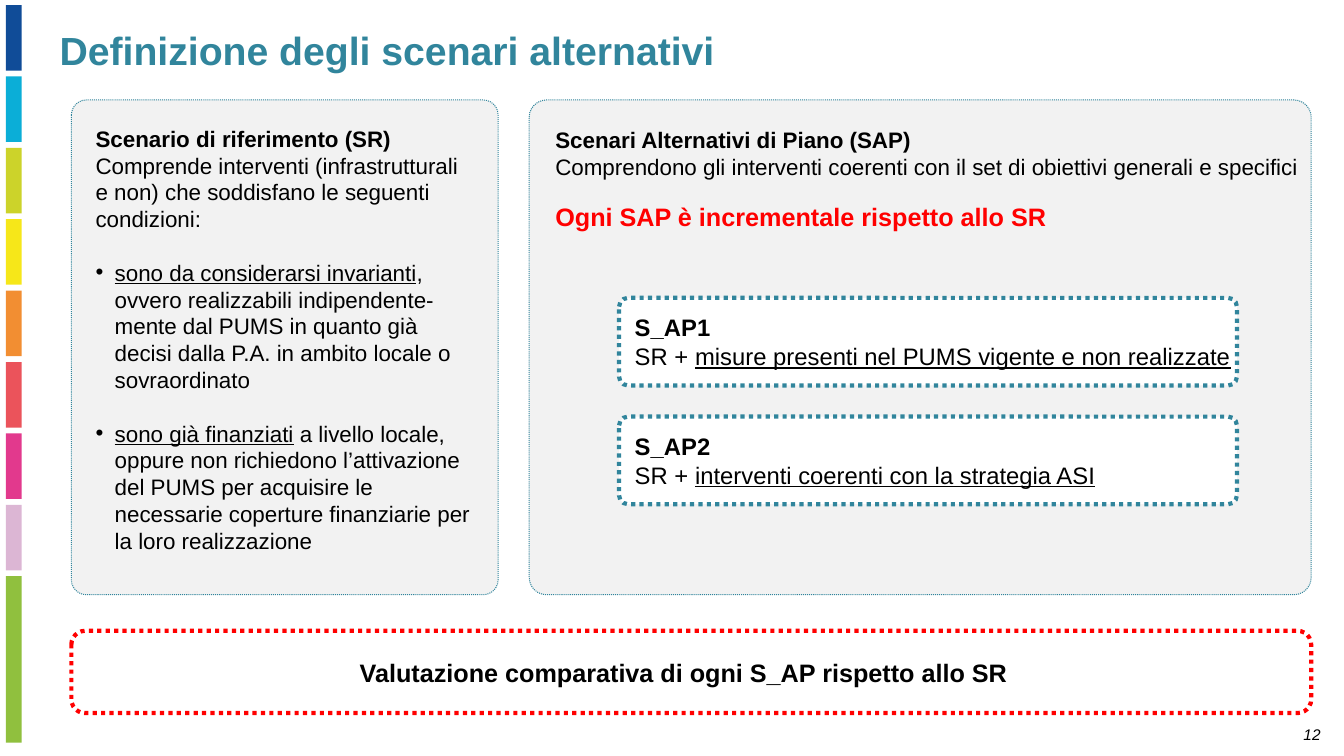
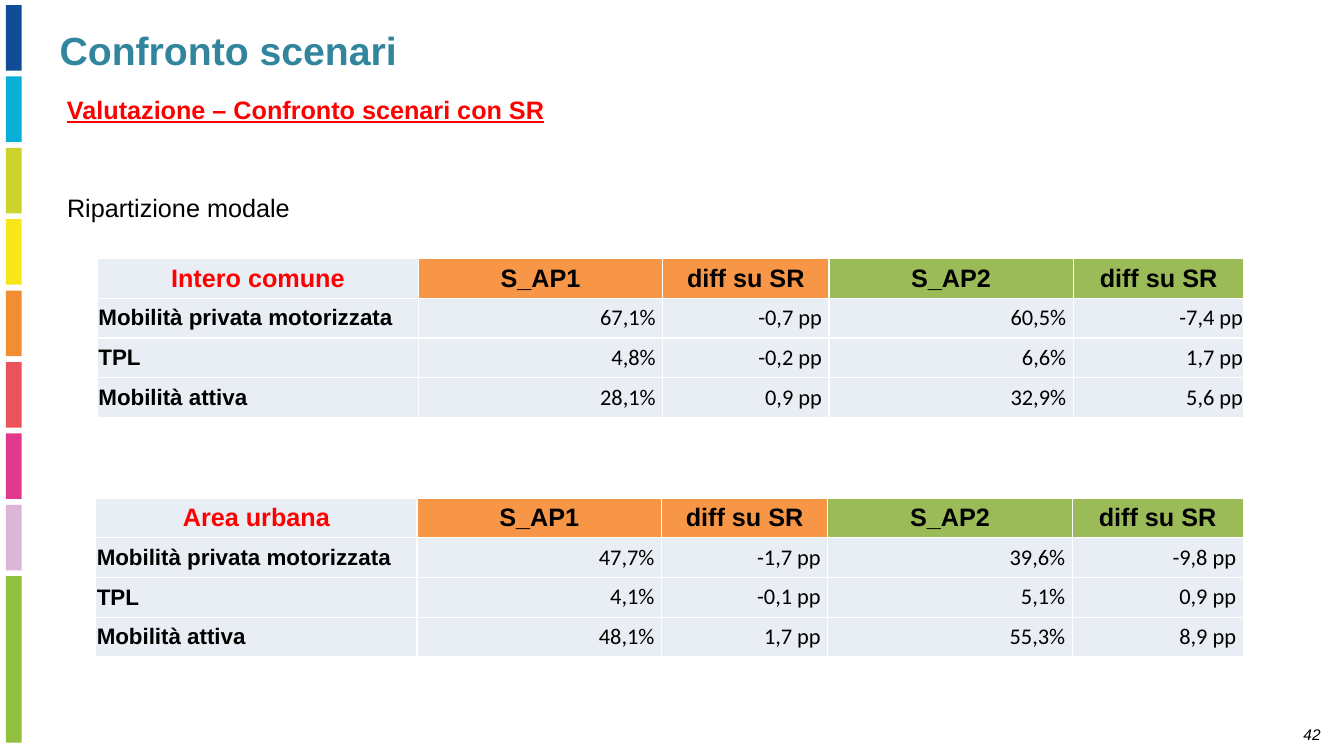
from dataclasses import dataclass

from pptx import Presentation
from pptx.dml.color import RGBColor
from pptx.enum.dml import MSO_LINE
from pptx.enum.shapes import MSO_SHAPE as SHAPE
from pptx.enum.text import MSO_ANCHOR as ANCHOR, MSO_AUTO_SIZE as FIT, PP_ALIGN as ALIGN
from pptx.oxml.xmlchemy import OxmlElement
from pptx.util import Inches, Pt

COLS, ROWS = 160, 90
CELL = Inches(13.3333) // COLS
TEAL, RED, BLACK, WHITE = "31859C", "FF0000", "000000", "FFFFFF"
PANEL, PALE, ORANGE, GREEN = "F2F2F2", "E9EDF4", "F79646", "9BBB59"
BANDS = ["104C98", "0BAED7", "CCD32A", "F6E719", "F28E32", "EB535B", "E2398D", "DCB6D4", "90C03E"]
TABLE_COLS = [0.28, 0.213, 0.145, 0.213, 0.149]


@dataclass
class Box:
    x: float
    y: float
    w: float
    h: float

    def inner(self, x, y, w, h):
        return Box(self.x + x * self.w, self.y + y * self.h, w * self.w, h * self.h)

    def emu(self):
        return [round(v * CELL) for v in (self.x, self.y, self.w, self.h)]


TITLE = Box(5.9, 2.5, 141.2, 6.9)
NUMBER = Box(144.2, 85.7, 14.2, 3.5)


def paint(target, color):
    if hasattr(target, "solid"):
        target.solid()
        target.fore_color.rgb = RGBColor.from_string(color)
    else:
        target.color.rgb = RGBColor.from_string(color)


def move(sp, box):
    sp.left, sp.top, sp.width, sp.height = box.emu()


def format_run(r, size, color=BLACK, style="", font="Arial"):
    f = r.font
    f.name, f.size = font, Pt(size)
    f.bold, f.italic, f.underline = "b" in style, "i" in style, "u" in style
    paint(f, color)


def set_bullet(p, char=None, indent=0):
    pPr = p._p.get_or_add_pPr()
    pPr.set("marL", str(Inches(indent)))
    pPr.set("indent", str(-Inches(indent)))
    bu = OxmlElement("a:buChar" if char else "a:buNone")
    if char:
        bu.set("char", char)
    pPr.append(bu)


def write(tf, paragraphs, size, color=BLACK, align=ALIGN.LEFT):
    tf.word_wrap = True
    for i, runs in enumerate(paragraphs):
        p = tf.add_paragraph() if i else tf.paragraphs[0]
        p.alignment = align
        for text, style in runs:
            r = p.add_run()
            r.text = text
            format_run(r, size, color, style)
    return tf.paragraphs


def add_text(slide, box, text, size, color=BLACK, style="", align=ALIGN.LEFT):
    sp = slide.shapes.add_textbox(*box.emu())
    write(sp.text_frame, [[(text, style)]], size, color, align)


def add_frame(slide, box, line, width, radius, fill=None, insets=(0.1, 0.05, 0.1, 0.05)):
    sp = slide.shapes.add_shape(SHAPE.ROUNDED_RECTANGLE, *box.emu())
    sp.shadow.inherit = False
    sp.adjustments[0] = radius
    if fill:
        paint(sp.fill, fill)
    else:
        sp.fill.background()
    paint(sp.line, line)
    sp.line.width, sp.line.dash_style = Pt(width), MSO_LINE.ROUND_DOT
    tf = sp.text_frame
    tf.margin_left, tf.margin_top, tf.margin_right, tf.margin_bottom = map(Inches, insets)
    tf.vertical_anchor = ANCHOR.MIDDLE
    return sp


def add_bands(slide, master):
    tree = master.shapes._spTree
    for i, color in enumerate(BANDS):
        height = 19.8 if i == len(BANDS) - 1 else 7.8
        sp = slide.shapes.add_shape(SHAPE.RECTANGLE, *Box(0.7, 0.6 + 8.5 * i, 1.9, height).emu())
        sp.shadow.inherit = False
        paint(sp.fill, color)
        sp.line.fill.background()
        sp._element.nvSpPr.cNvPr.set("id", str(100 + i))
        tree.insert(2 + i, sp._element)


def start_slide(prs, layout, title, number):
    slide = prs.slides.add_slide(prs.slide_layouts[layout])
    sp = slide.shapes.title
    move(sp, TITLE)
    tf = sp.text_frame
    tf.auto_size, tf.vertical_anchor = FIT.NONE, ANCHOR.MIDDLE
    write(tf, [[(title, "b")]], 28, TEAL)
    add_text(slide, NUMBER, number, 11, style="i", align=ALIGN.RIGHT)
    return slide


def reference_panel(slide, box):
    panel = add_frame(slide, box, TEAL, 0.75, 0.035, PANEL)
    slide.shapes._spTree.insert(2, panel._element)
    body = slide.placeholders[1]
    move(body, box.inner(0.033, 0.04, 0.926, 0.9))
    body.text_frame.auto_size = FIT.NONE
    paragraphs = write(body.text_frame, [
        [("Scenario di riferimento (SR)", "b")],
        [("Comprende interventi (infrastrutturali e non) che soddisfano le seguenti condizioni:", "")],
        [("sono da considerarsi invarianti", "u"),
         (", ovvero realizzabili indipendente-mente dal PUMS in quanto già decisi dalla P.A. "
          "in ambito locale o sovraordinato", "")],
        [("sono già finanziati", "u"),
         (" a livello locale, oppure non richiedono l’attivazione del PUMS per acquisire le "
          "necessarie coperture finanziarie per la loro realizzazione", "")],
    ], 16)
    for i, p in enumerate(paragraphs):
        listed = i > 1
        p.space_before = Pt(19 if listed else 0)
        set_bullet(p, "•" if listed else None, 0.19 if listed else 0)


def alternatives_panel(slide, box):
    panel = add_frame(slide, box, TEAL, 0.75, 0.035, PANEL, (0.21, 0.21, 0.05, 0.05))
    tf = panel.text_frame
    tf.vertical_anchor = ANCHOR.TOP
    paragraphs = write(tf, [
        [("Scenari Alternativi di Piano (SAP)", "b")],
        [("Comprendono gli interventi coerenti con il set di obiettivi generali e specifici", "")],
        [("Ogni SAP è incrementale rispetto allo SR", "b")],
    ], 16)
    paragraphs[2].space_before = Pt(15)
    format_run(paragraphs[2].runs[0], 18, RED, "b")
    scenarios = [("S_AP1", "misure presenti nel PUMS vigente e non realizzate"),
                 ("S_AP2", "interventi coerenti con la strategia ASI")]
    for i, (name, measures) in enumerate(scenarios):
        sp = add_frame(slide, box.inner(0.115, 0.4 + 0.24 * i, 0.79, 0.177), TEAL, 3, 0.1, WHITE,
                       (0.13, 0.05, 0, 0.05))
        write(sp.text_frame, [[(name, "b")], [("SR + ", ""), (measures, "u")]], 17)


def scenarios_slide(prs):
    slide = start_slide(prs, 1, "Definizione degli scenari alternativi", "12")
    reference_panel(slide, Box(8.5, 11.9, 50.8, 58.9))
    alternatives_panel(slide, Box(63, 11.9, 93.1, 58.9))
    sp = add_frame(slide, Box(8.5, 75.1, 147.6, 9.8), RED, 3, 0.167, insets=(0.1, 0.05, 0.25, 0.05))
    write(sp.text_frame, [[("Valutazione comparativa di ogni S_AP rispetto allo SR", "b")]], 18,
          align=ALIGN.CENTER)
    return slide


def format_cell(cell, text, fill, size, color, style, font, align, inset):
    cell.text = text
    cell.vertical_anchor = ANCHOR.MIDDLE
    cell.margin_left = cell.margin_right = Inches(inset)
    cell.margin_top = cell.margin_bottom = 0
    p = cell.text_frame.paragraphs[0]
    p.alignment = align
    format_run(p.runs[0], size, color, style, font)
    tcPr = cell._tc.get_or_add_tcPr()
    for side in ("lnL", "lnR", "lnT", "lnB"):
        ln = OxmlElement(f"a:{side}")
        ln.set("w", str(Pt(1)))
        clr = OxmlElement("a:srgbClr")
        clr.set("val", WHITE)
        solid = OxmlElement("a:solidFill")
        solid.append(clr)
        ln.append(solid)
        tcPr.append(ln)
    paint(cell.fill, fill)


def modal_table(slide, box, area, values, last_inset):
    modes = ["Mobilità privata motorizzata", "TPL", "Mobilità attiva"]
    rows = [[area, "S_AP1", "diff su SR", "S_AP2", "diff su SR"]]
    rows += [[mode, *line] for mode, line in zip(modes, values)]
    head_fills = [PALE, ORANGE, ORANGE, GREEN, GREEN]
    table = slide.shapes.add_table(len(rows), len(TABLE_COLS), *box.emu()).table
    table.horz_banding = False
    for col, share in zip(table.columns, TABLE_COLS):
        col.width = round(share * box.w * CELL)
    for i, row in enumerate(rows):
        for j, text in enumerate(row):
            cell = table.cell(i, j)
            if i == 0:
                format_cell(cell, text, head_fills[j], 18, BLACK if j else RED, "b", "Arial",
                            ALIGN.CENTER, 0.01)
            elif j == 0:
                format_cell(cell, text, PALE, 16, BLACK, "b", "Arial", ALIGN.LEFT, 0.01)
            else:
                inset = last_inset if j == len(row) - 1 else 0.07
                format_cell(cell, text, PALE, 16, BLACK, "", "Calibri", ALIGN.RIGHT, inset)


def comparison_slide(prs):
    slide = start_slide(prs, 5, "Confronto scenari", "42")
    add_text(slide, Box(6.8, 10.6, 150, 4.8), "Valutazione – Confronto scenari con SR", 18, RED, "bu")
    add_text(slide, Box(6.8, 22.3, 80, 4.8), "Ripartizione modale", 18)
    modal_table(slide, Box(11.6, 30.8, 136.5, 18.9), "Intero comune", [
        ["67,1%", "-0,7 pp", "60,5%", "-7,4 pp"],
        ["4,8%", "-0,2 pp", "6,6%", "1,7 pp"],
        ["28,1%", "0,9 pp", "32,9%", "5,6 pp"],
    ], 0.01)
    modal_table(slide, Box(11.4, 59.3, 136.6, 18.9), "Area urbana", [
        ["47,7%", "-1,7 pp", "39,6%", "-9,8 pp"],
        ["4,1%", "-0,1 pp", "5,1%", "0,9 pp"],
        ["48,1%", "1,7 pp", "55,3%", "8,9 pp"],
    ], 0.07)


def main():
    prs = Presentation()
    prs.slide_width, prs.slide_height = COLS * CELL, ROWS * CELL
    add_bands(scenarios_slide(prs), prs.slide_master)
    comparison_slide(prs)
    prs.save("out.pptx")


if __name__ == "__main__":
    main()
